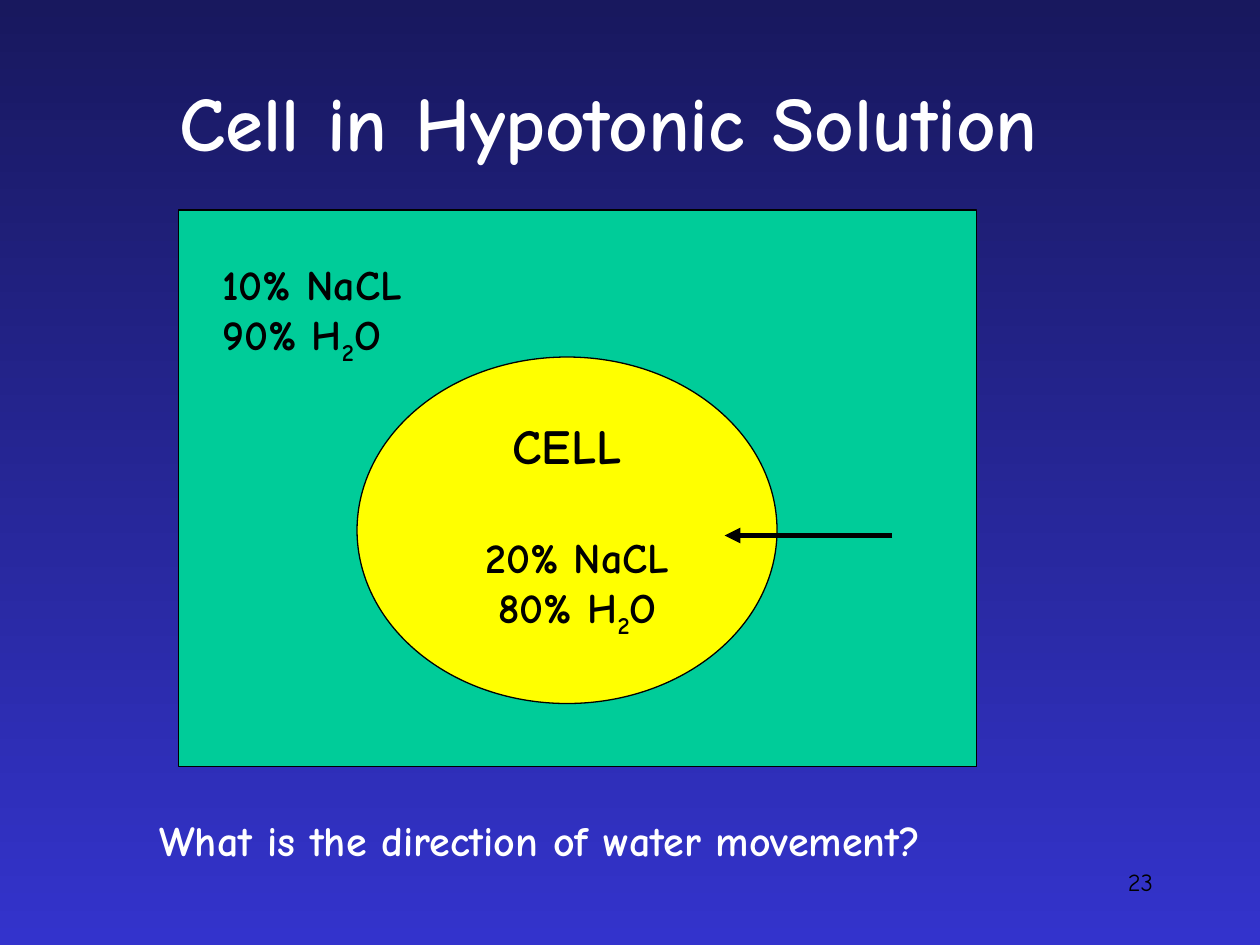
"""Build the slide about a cell in a hypotonic solution."""
import pptx
import pptx.dml.color
import pptx.enum.shapes
import pptx.enum.text
import pptx.oxml
import pptx.oxml.ns
import pptx.util

Pt = pptx.util.Pt
SHAPE = pptx.enum.shapes.MSO_SHAPE
ALIGN = pptx.enum.text.PP_ALIGN
ANCHOR = pptx.enum.text.MSO_ANCHOR
FONT = "Comic Neue"


def rgb(value):
    return pptx.dml.color.RGBColor.from_string(value)


def set_background(slide, top, bottom):
    fill = slide.background.fill
    fill.gradient()
    fill.gradient_angle = 270
    for stop, position, color in zip(fill.gradient_stops, (0, 1), (top, bottom)):
        stop.position = position
        stop.color.rgb = rgb(color)


def add_outlined(slide, kind, x, y, w, h, fill):
    sp = slide.shapes.add_shape(kind, Pt(x), Pt(y), Pt(w), Pt(h))
    sp.shadow.inherit = False
    sp.fill.solid()
    sp.fill.fore_color.rgb = rgb(fill)
    sp.line.color.rgb = rgb("000000")
    sp.line.width = Pt(0.75)


def add_text(slide, text, x, y, w, h, size=24, color="000000", bold=True,
             align=ALIGN.LEFT, anchor=ANCHOR.TOP):
    sp = slide.shapes.add_textbox(Pt(x), Pt(y), Pt(w), Pt(h))
    tf = sp.text_frame
    tf.word_wrap = True
    tf.vertical_anchor = anchor
    for i, line in enumerate(text.split("\n")):
        p = tf.add_paragraph() if i else tf.paragraphs[0]
        p.alignment = align
        for j, part in enumerate(line.split("_")):
            r = p.add_run()
            r.text = part
            r.font.name = FONT
            r.font.size = Pt(size)
            r.font.bold = bold
            r.font.color.rgb = rgb(color)
            if j % 2:
                r.font._element.set("baseline", "-25000")


def add_arrow(slide, x1, y1, x2, y2, width):
    line = slide.shapes.add_connector(
        pptx.enum.shapes.MSO_CONNECTOR.STRAIGHT, Pt(x1), Pt(y1), Pt(x2), Pt(y2))
    line.line.color.rgb = rgb("000000")
    line.line.width = Pt(width)
    ns = pptx.oxml.ns.nsdecls("a")
    line.line._get_or_add_ln().append(
        pptx.oxml.parse_xml(f'<a:tailEnd {ns} type="triangle"/>'))
    line._element.spPr.append(pptx.oxml.parse_xml(f"<a:effectLst {ns}/>"))


def main():
    prs = pptx.Presentation()
    prs.slide_width, prs.slide_height = Pt(720), Pt(540)
    slide = prs.slides.add_slide(prs.slide_layouts[6])
    set_background(slide, "18185E", "3333CC")
    add_text(slide, "23", 516, 492, 150, 36, size=14, bold=False, align=ALIGN.RIGHT)
    add_text(slide, "Cell in Hypotonic Solution", 42, 24, 612, 90, size=44,
             color="FFFFFF", align=ALIGN.CENTER, anchor=ANCHOR.MIDDLE)
    add_outlined(slide, SHAPE.RECTANGLE, 102, 120, 456, 318, "00CC99")
    add_outlined(slide, SHAPE.OVAL, 204, 204, 240, 198, "FFFF00")
    add_text(slide, "CELL", 270, 234, 108, 41, size=28, align=ALIGN.CENTER)
    add_text(slide, "10% NaCL\n90% H_2_O", 120, 144, 168, 65)
    add_text(slide, "20% NaCL\n80% H_2_O", 258, 300, 144, 65, align=ALIGN.CENTER)
    add_text(slide, "What is the direction of water movement?", 84, 462, 534, 36,
             color="FFFFFF")
    add_arrow(slide, 510, 306, 414, 306, 3)
    prs.save("out.pptx")


if __name__ == "__main__":
    main()
